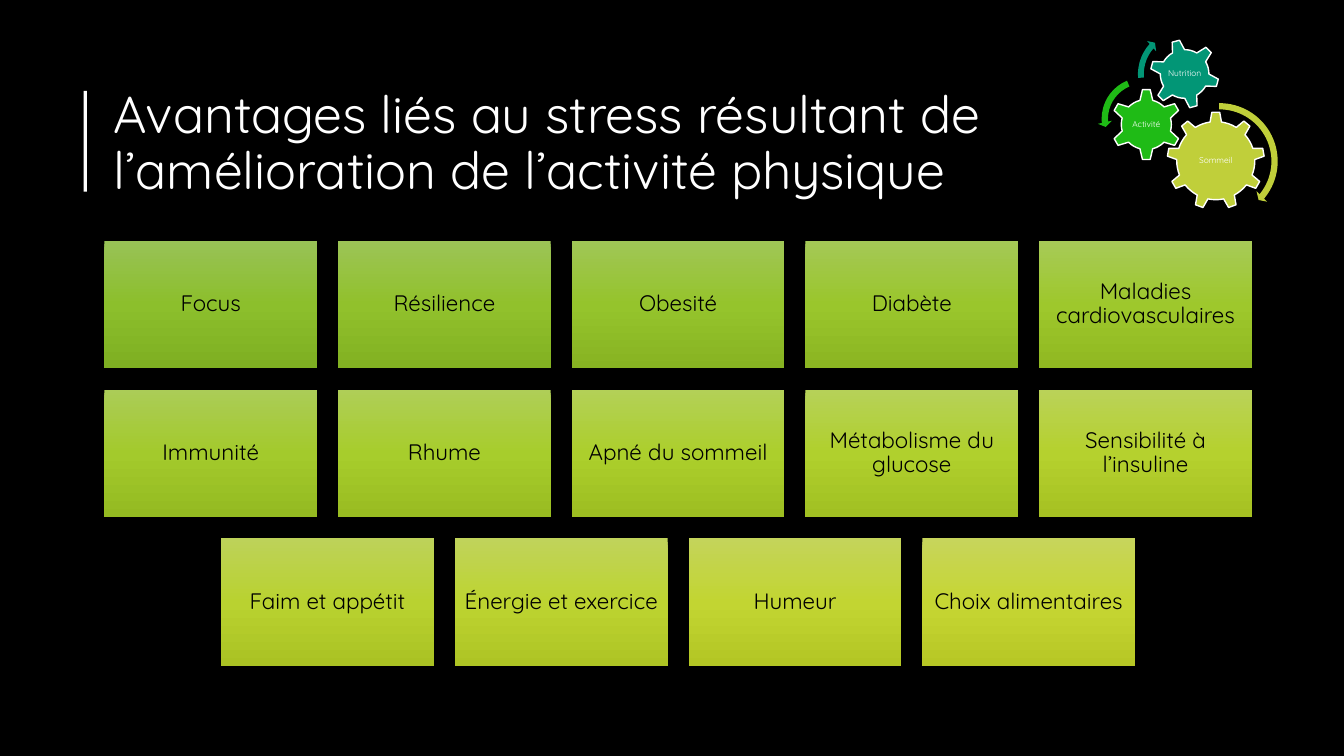
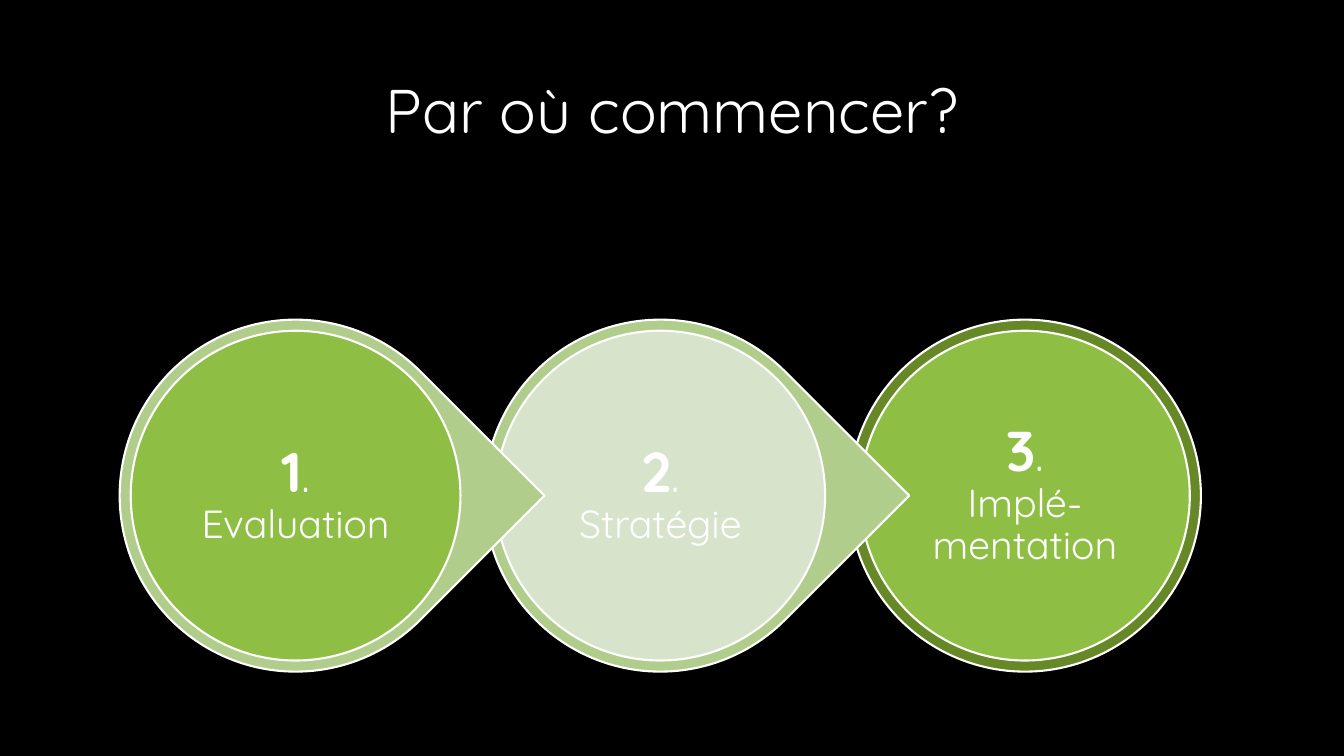
from copy import deepcopy

from pptx import Presentation
from pptx.dml.color import RGBColor
from pptx.enum.shapes import MSO_SHAPE as SHAPE
from pptx.enum.text import MSO_ANCHOR as ANCHOR, MSO_AUTO_SIZE as AUTO, PP_ALIGN as ALIGN
from pptx.util import Cm, Pt

FONT = "Quicksand"
WHITE, BLACK = "FFFFFF", "000000"
LIME, GREEN, TEAL = "C0CF3A", "1FBB16", "029676"
LEAF, SAGE, PALE, MOSS = "8FBE45", "B0CD8B", "D7E3CA", "668826"
rgb = RGBColor.from_string


def paint(sp, color, line=None, width=1):
    sp.shadow.inherit = False
    sp.fill.solid()
    sp.fill.fore_color.rgb = rgb(color)
    if line:
        sp.line.color.rgb = rgb(line)
        sp.line.width = Pt(width)
    else:
        sp.line.fill.background()


def write(tf, text, size, color=WHITE, bold=False, align=ALIGN.CENTER, inset=0.25, new_line=False):
    tf.word_wrap = True
    tf.auto_size = AUTO.NONE
    tf.vertical_anchor = ANCHOR.MIDDLE
    tf.margin_left = tf.margin_right = Cm(inset)
    tf.margin_top = tf.margin_bottom = Cm(min(inset, 0.18))
    p = tf.paragraphs[0]
    p.alignment = align
    p.line_spacing = 0.9
    if new_line:
        p.add_line_break()
    r = p.add_run()
    r.text = text
    r.font.name = FONT
    r.font.size = Pt(size)
    r.font.bold = bold
    r.font.color.rgb = rgb(color)


prs = Presentation()
prs.slide_width, prs.slide_height = Cm(33.87), Cm(19.05)
bg = prs.slide_master.background.fill
bg.solid()
bg.fore_color.rgb = rgb(BLACK)

titles = [
    ("Avantages liés au stress résultant de l’amélioration de l’activité physique",
     37, ALIGN.LEFT, (2.62, 1.98, 28.93, 3.33)),
    ("Par où commencer?", 44, ALIGN.CENTER, (2.34, 1.02, 29.21, 3.68)),
]
slides = []
for text, size, align, box in titles:
    s = prs.slides.add_slide(prs.slide_layouts[5])
    title = s.shapes.title
    title.left, title.top, title.width, title.height = map(Cm, box)
    write(title.text_frame, text, size, align=align)
    slides.append(s)
benefits, steps = slides

bar = benefits.shapes.add_shape(SHAPE.RECTANGLE, Cm(2.11), Cm(2.29), Cm(0.08), Cm(2.54))
paint(bar, WHITE)

rows = [
    ["Focus", "Résilience", "Obesité", "Diabète", "Maladies cardiovasculaires"],
    ["Immunité", "Rhume", "Apné du sommeil", "Métabolisme du glucose", "Sensibilité à l’insuline"],
    ["Faim et appétit", "Énergie et exercice", "Humeur", "Choix alimentaires"],
]
first = ["98C256", "8CBF2C", "7EAF22"]
middle = ["B3D057", "ACCF2C", "9DBE21"]
last = ["C7D55B", "C6D633", "B7C725"]
tile_w, tile_h, gap_x, gap_y = 5.36, 3.21, 0.53, 0.54
center_x, top = 17.09, 6.07
n = 0
for i, row in enumerate(rows):
    left = center_x - (len(row) * (tile_w + gap_x) - gap_x) / 2
    for j, text in enumerate(row):
        tile = benefits.shapes.add_shape(
            SHAPE.RECTANGLE, Cm(left + j * (tile_w + gap_x)), Cm(top + i * (tile_h + gap_y)),
            Cm(tile_w), Cm(tile_h))
        paint(tile, LEAF)
        tile.fill.gradient()
        tile.fill.gradient_angle = 270
        stop = tile.fill.gradient_stops[0]._gs
        stop.addnext(deepcopy(stop))
        start, end, t = (first, middle, n / 7) if n < 7 else (middle, last, (n - 7) / 6)
        for k, stop in enumerate(tile.fill.gradient_stops):
            stop.position = k / 2
            stop.color.rgb = RGBColor(*(round(a + (b - a) * t)
                                        for a, b in zip(rgb(start[k]), rgb(end[k]))))
        write(tile.text_frame, text, 16, BLACK, inset=0.18)
        n += 1

gears = [
    ("Sommeil", SHAPE.GEAR_9, 29.41, 2.82, 2.46, 0, LIME),
    ("Activité", SHAPE.GEAR_6, 27.99, 2.24, 1.8, 0, GREEN),
    ("Nutrition", SHAPE.GEAR_6, 28.98, 0.99, 1.75, 345, TEAL),
]
label_w, label_h = 1.6, 1
for text, kind, x, y, size, angle, color in gears:
    gear = benefits.shapes.add_shape(kind, Cm(x), Cm(y), Cm(size), Cm(size))
    gear.rotation = angle
    paint(gear, color, WHITE)
    label = benefits.shapes.add_textbox(
        Cm(x + (size - label_w) / 2), Cm(y + (size - label_h) / 2), Cm(label_w), Cm(label_h))
    write(label.text_frame, text, 6, inset=0.03)

arrows = [
    (SHAPE.CIRCULAR_ARROW, 29.16, 2.49, 3.15, LIME, [0.05, 2.99, 23.85, 161.79, 0.06]),
    (SHAPE.LEFT_CIRCULAR_ARROW, 27.66, 1.85, 2.29, GREEN, [0.07, 4.3, 104.89, 148.38, 0.08]),
    (SHAPE.CIRCULAR_ARROW, 28.58, 0.64, 2.46, TEAL, [0.06, 3.94, 133.14, 105.08, 0.07]),
]
for kind, x, y, size, color, adjustments in arrows:
    arrow = benefits.shapes.add_shape(kind, Cm(x), Cm(y), Cm(size), Cm(size))
    paint(arrow, color)
    for k, value in enumerate(adjustments):
        arrow.adjustments[k] = value

stages = [
    ("1", "Evaluation", SHAPE.TEAR, SAGE, LEAF),
    ("2", "Stratégie", SHAPE.TEAR, SAGE, PALE),
    ("3", "Implé-mentation", SHAPE.OVAL, MOSS, LEAF),
]
first_x, center_y, pitch = 7.45, 12.49, 9.19
outer, inner = 8.87, 8.31
for i, (number, name, kind, edge, face) in reversed(list(enumerate(stages))):
    x = first_x + i * pitch
    for shape, size, color in [(kind, outer, edge), (SHAPE.OVAL, inner, face)]:
        sp = steps.shapes.add_shape(
            shape, Cm(x - size / 2), Cm(center_y - size / 2), Cm(size), Cm(size))
        paint(sp, color, WHITE, 1.5)
        if shape == SHAPE.TEAR:
            sp.rotation = 45
    write(sp.text_frame, number, 40, bold=True, inset=0.15)
    write(sp.text_frame, ".", 32, inset=0.15)
    write(sp.text_frame, name, 28, inset=0.15, new_line=True)

prs.save("out.pptx")
